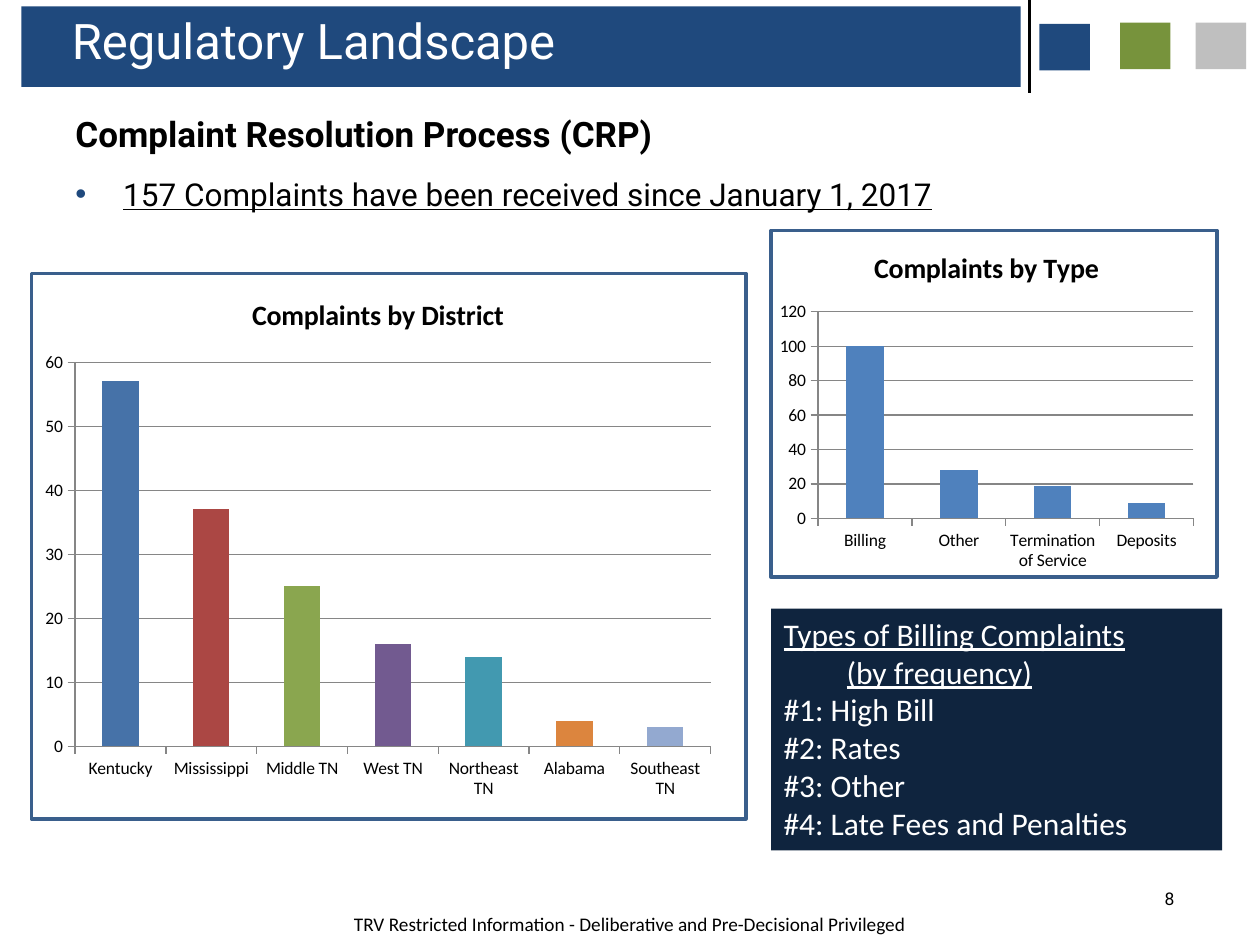
from typing import NamedTuple, Optional

from lxml import etree
from pptx import Presentation
from pptx.chart.data import CategoryChartData
from pptx.dml.color import RGBColor
from pptx.enum.chart import XL_CHART_TYPE as ChartType, XL_TICK_MARK as TickMark
from pptx.enum.shapes import MSO_CONNECTOR as Connector, MSO_SHAPE as ShapeType
from pptx.enum.text import MSO_ANCHOR as Anchor, PP_ALIGN as Align
from pptx.oxml.ns import qn
from pptx.util import Inches, Pt

COLORS = {
    "navy": "1F497D", "green": "77933C", "silver": "BFBFBF", "black": "000000",
    "white": "FFFFFF", "frame": "3A5F8C", "panel": "0F243E", "grid": "868686",
    "bar": "4F81BD",
}
DISTRICT_COLORS = ["4672A8", "AB4744", "8AA64F", "725A90", "4299B0", "DC853E", "93A9D0"]


class Box(NamedTuple):
    left: float
    top: float
    width: float
    height: float

    def lengths(self):
        return [Inches(value) for value in self]


class Rectangle(NamedTuple):
    box: Box
    fill: Optional[str] = None
    line: Optional[str] = None


class ColumnChart(NamedTuple):
    title: str
    box: Box
    values: dict
    maximum: int
    step: int
    point_colors: list


HEADER = [
    Rectangle(Box(9.49, 0.18, 0.4, 0.37), "silver"),
    Rectangle(Box(8.25, 0.19, 0.4, 0.37), "navy"),
    Rectangle(Box(8.89, 0.18, 0.4, 0.37), "green"),
    Rectangle(Box(0.17, 0.05, 7.93, 0.64), "navy"),
]
FRAMES = [
    Rectangle(Box(0.25, 2.17, 5.67, 4.33), line="frame"),
    Rectangle(Box(6.12, 1.83, 3.54, 2.75), line="frame"),
]
CHARTS = [
    ColumnChart(
        "Complaints by District", Box(0.25, 2.17, 5.5, 4.25),
        {"Kentucky": 57, "Mississippi": 37, "Middle TN": 25, "West TN": 16,
         "Northeast TN": 14, "Alabama": 4, "Southeast TN": 3},
        60, 10, DISTRICT_COLORS),
    ColumnChart(
        "Complaints by Type", Box(6.12, 1.83, 3.42, 2.75),
        {"Billing": 100, "Other": 28, "Termination of Service": 19, "Deposits": 9},
        120, 20, []),
]
BILLING_TYPES = ["High Bill", "Rates", "Other", "Late Fees and Penalties"]


def rgb(name: str) -> RGBColor:
    return RGBColor.from_string(COLORS[name])


def style_font(font, name: str, size: float, color: str, bold=False, underline=False) -> None:
    font.name, font.size = name, Pt(size)
    font.bold, font.underline = bold, underline
    font.color.rgb = rgb(color)


def add_rectangle(slide, item: Rectangle):
    shape = slide.shapes.add_shape(ShapeType.RECTANGLE, *item.box.lengths())
    shape.shadow.inherit = False
    if item.fill:
        shape.fill.solid()
        shape.fill.fore_color.rgb = rgb(item.fill)
    else:
        shape.fill.background()
    if item.line:
        shape.line.color.rgb = rgb(item.line)
        shape.line.width = Pt(2)
    else:
        shape.line.fill.background()
    return shape


def add_text(slide, box: Box, text: str, align=Align.LEFT):
    frame = slide.shapes.add_textbox(*box.lengths()).text_frame
    frame.word_wrap = True
    frame.text = text
    for paragraph in frame.paragraphs:
        paragraph.alignment = align
    return frame


def add_divider(slide) -> None:
    x = Inches(8.17)
    line = slide.shapes.add_connector(Connector.STRAIGHT, x, 0, x, Inches(0.74))
    line.line.color.rgb = rgb("black")
    line.line.width = Pt(1.5)
    etree.SubElement(line._element.spPr, qn("a:effectLst"))


def add_bullet(paragraph, color: str) -> None:
    properties = paragraph._p.get_or_add_pPr()
    properties.set("marL", str(Inches(0.38)))
    properties.set("indent", str(-Inches(0.38)))
    bullet_color = etree.SubElement(properties, qn("a:buClr"))
    etree.SubElement(bullet_color, qn("a:srgbClr"), val=COLORS[color])
    etree.SubElement(properties, qn("a:buFont"), typeface="Arial")
    etree.SubElement(properties, qn("a:buChar"), char="•")


def add_column_chart(slide, item: ColumnChart) -> None:
    data = CategoryChartData()
    data.categories = list(item.values)
    data.add_series("Series 1", list(item.values.values()))
    chart = slide.shapes.add_chart(
        ChartType.COLUMN_CLUSTERED, *item.box.lengths(), data).chart
    style_font(chart.font, "Calibri", 10, "black")
    chart.has_legend = False
    chart.has_title = True
    title = chart.chart_title.text_frame
    title.text = item.title
    style_font(title.paragraphs[0].runs[0].font, "Calibri", 16, "black", bold=True)

    # Axes and gridlines
    values = chart.value_axis
    values.minimum_scale, values.maximum_scale = 0, item.maximum
    values.major_unit = item.step
    values.has_major_gridlines = True
    for axis in (chart.category_axis, values):
        axis.major_tick_mark = TickMark.OUTSIDE
    for line_owner in (chart.category_axis, values, values.major_gridlines):
        line_owner.format.line.color.rgb = rgb("grid")
        line_owner.format.line.width = Pt(0.75)

    # Columns
    plot = chart.plots[0]
    plot.gap_width = 150
    plot.vary_by_categories = False
    series = plot.series[0]
    series.format.fill.solid()
    series.format.fill.fore_color.rgb = rgb("bar")
    for index, color in enumerate(item.point_colors):
        fill = series.points[index].format.fill
        fill.solid()
        fill.fore_color.rgb = RGBColor.from_string(color)


def add_billing_panel(slide) -> None:
    frame = add_rectangle(slide, Rectangle(Box(6.12, 4.83, 3.58, 1.92), "panel")).text_frame
    frame.word_wrap = True
    frame.vertical_anchor = Anchor.TOP
    ranked = [f"#{rank}: {name}" for rank, name in enumerate(BILLING_TYPES, 1)]
    frame.text = "\n".join(["Types of Billing Complaints", "\t", *ranked])
    frame.paragraphs[1].add_run().text = "(by frequency)"
    for paragraph in frame.paragraphs:
        paragraph.alignment = Align.LEFT
        for run in paragraph.runs:
            heading = run.text.startswith(("Types", "("))
            style_font(run.font, "Calibri", 18, "white", underline=heading)


def main() -> None:
    presentation = Presentation()
    presentation.slide_width, presentation.slide_height = Inches(10), Inches(7.5)
    slide = presentation.slides.add_slide(presentation.slide_layouts[5])

    # Header band
    title = slide.shapes.title
    for item in HEADER:
        add_rectangle(slide, item)
    add_divider(slide)
    slide.shapes._spTree.append(title._element)
    title.left, title.top, title.width, title.height = Box(0.47, 0.03, 7.45, 0.57).lengths()
    title.text_frame.text = "Regulatory Landscape"
    title.text_frame.vertical_anchor = Anchor.TOP
    heading = title.text_frame.paragraphs[0]
    heading.alignment = Align.LEFT
    style_font(heading.runs[0].font, "Roboto", 28, "white")

    # Footer and slide number
    footer = add_text(
        slide, Box(2.58, 7.32, 4.84, 0.09),
        "TRV Restricted Information - Deliberative and Pre-Decisional Privileged", Align.CENTER)
    footer.margin_left = footer.margin_right = footer.margin_top = footer.margin_bottom = 0
    footer.paragraphs[0].line_spacing = 0.5
    style_font(footer.paragraphs[0].runs[0].font, "Calibri", 11, "black")
    number = add_text(slide, Box(8.96, 7, 0.46, 0.32), "8", Align.RIGHT)
    style_font(number.paragraphs[0].runs[0].font, "Roboto", 10, "black")

    # Body text
    body = add_text(
        slide, Box(0.5, 0.84, 9.16, 5.83),
        "Complaint Resolution Process (CRP)\n"
        "157 Complaints have been received since January 1, 2017")
    process, received = body.paragraphs
    style_font(process.runs[0].font, "Roboto", 20, "black", bold=True)
    received.space_before = Pt(12)
    add_bullet(received, "navy")
    style_font(received.runs[0].font, "Roboto", 18, "black", underline=True)

    # Charts, frames and billing list
    for item in CHARTS:
        add_column_chart(slide, item)
    for item in FRAMES:
        add_rectangle(slide, item)
    add_billing_panel(slide)
    presentation.save("out.pptx")


if __name__ == "__main__":
    main()
